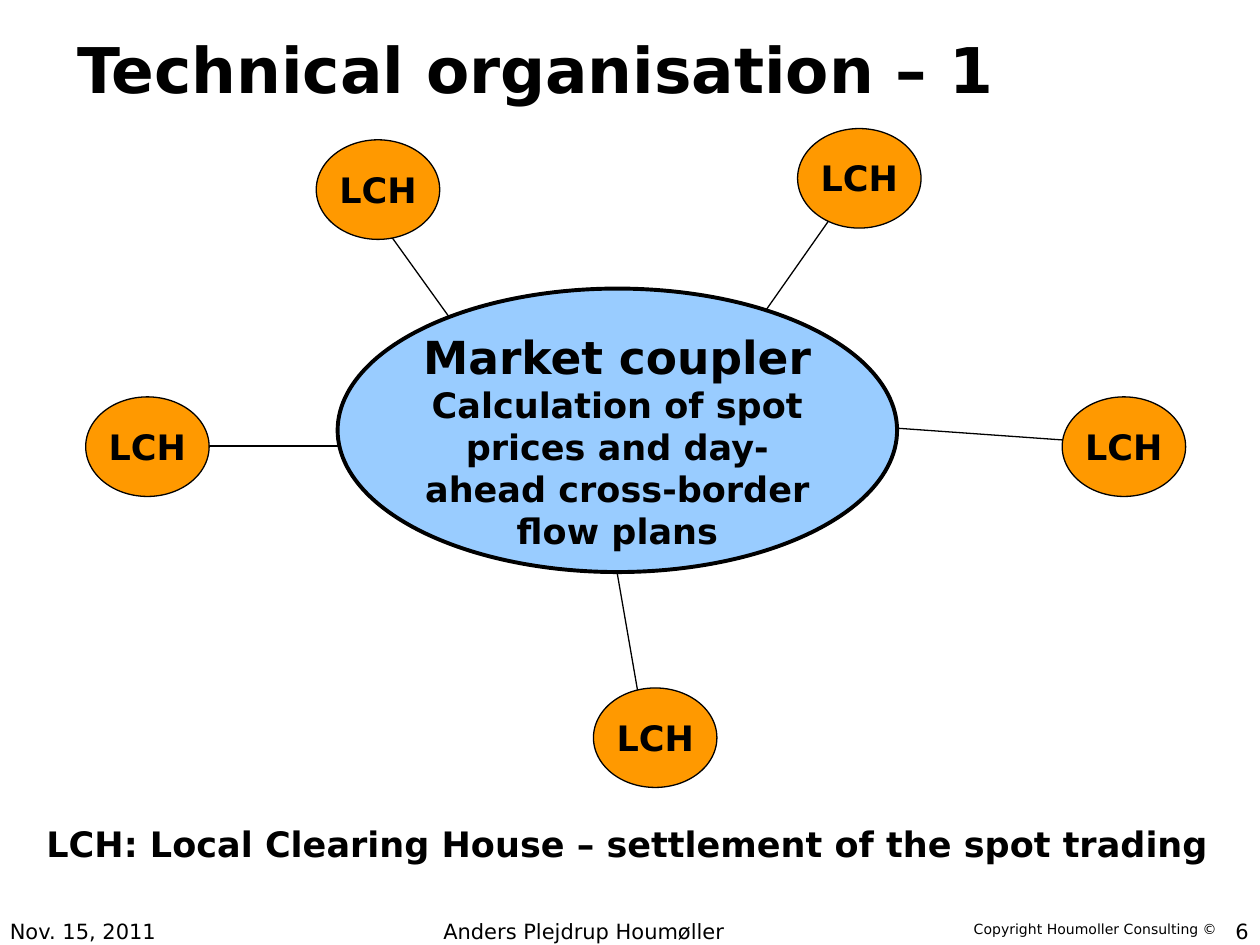
from dataclasses import dataclass

from lxml import etree
from pptx import Presentation
from pptx.dml.color import RGBColor
from pptx.enum import shapes as es, text as et
from pptx.oxml import ns
from pptx.slide import Slide
from pptx.util import Inches, Pt


@dataclass(frozen=True)
class Theme:
    face: str = "DejaVu Sans"
    ink: str = "000000"
    hub: str = "99CCFF"
    node: str = "FF9900"
    title: int = 36
    head: int = 26
    gap: int = 24
    body: int = 20
    foot: int = 12
    small: int = 8
    thin: float = 0.75
    thick: float = 2.25


@dataclass(frozen=True)
class Box:
    x: float
    y: float
    w: float
    h: float


@dataclass(frozen=True)
class Label:
    box: Box
    runs: tuple[tuple[str, int], ...]
    align: et.PP_ALIGN = et.PP_ALIGN.LEFT
    bold: bool = False
    wrap: bool = True
    middle: bool = False


@dataclass(frozen=True)
class House:
    x: float
    y: float
    start: tuple[float, float]
    end: tuple[float, float]


T = Theme()
MID, RIGHT = et.PP_ALIGN.CENTER, et.PP_ALIGN.RIGHT

HUB = Box(2.68, 2.29, 4.44, 2.25)
HOUSES = (
    House(4.71, 5.46, (4.85, 4.27), (5.1, 5.71)),
    House(8.43, 3.15, (8.69, 3.51), (6.86, 3.38)),
    House(6.33, 1.02, (6.67, 1.62), (6.01, 2.56)),
    House(2.51, 1.11, (3, 1.73), (3.74, 2.76)),
    House(0.68, 3.15, (1.39, 3.54), (3.16, 3.54)),
)
FRAME = (
    Label(Box(7.63, 7.26, 2.16, 0.23),
          (("Copyright Houmoller Consulting ©", T.small),), wrap=False),
    Label(Box(0, -0.08, 8.5, 1.25), (("Technical organisation – 1", T.title),),
          MID, bold=True, middle=True),
    Label(Box(-0.02, 7.24, 2.33, 0.52), (("Nov. 15, 2011", T.foot),)),
    Label(Box(3.42, 7.24, 3.17, 0.52), (("Anders Plejdrup Houmøller", T.foot),)),
    Label(Box(7.68, 7.24, 2.33, 0.52), (("6", T.foot),), RIGHT),
    Label(Box(0.07, 6.48, 9.82, 0.44),
          (("LCH: Local Clearing House – settlement of the spot trading", T.body),),
          MID, bold=True, wrap=False),
)
COUPLER = Label(
    Box(3.21, 2.56, 3.38, 1.99),
    (("Market coupler", T.head), (" ", T.gap),
     ("Calculation of spot prices and day-ahead cross-border flow plans", T.body)),
    MID, bold=True)


def place(box: Box) -> tuple[Inches, ...]:
    return tuple(Inches(v) for v in (box.x, box.y, box.w, box.h))


def write(slide: Slide, label: Label) -> None:
    frame = slide.shapes.add_textbox(*place(label.box)).text_frame
    frame.word_wrap = label.wrap
    if label.middle:
        frame.vertical_anchor = et.MSO_ANCHOR.MIDDLE
    para = frame.paragraphs[0]
    para.alignment = label.align
    para.font.name = T.face
    para.font.bold = label.bold
    para.font.color.rgb = RGBColor.from_string(T.ink)
    if len(label.runs) == 1:
        para.font.size = Pt(label.runs[0][1])
    for words, size in label.runs:
        run = para.add_run()
        run.text = words
        if len(label.runs) > 1:
            run.font.size = Pt(size)


def oval(slide: Slide, box: Box, fill: str, width: float) -> None:
    shape = slide.shapes.add_shape(es.MSO_SHAPE.OVAL, *place(box))
    shape.shadow.inherit = False
    shape.fill.solid()
    shape.fill.fore_color.rgb = RGBColor.from_string(fill)
    shape.line.color.rgb = RGBColor.from_string(T.ink)
    shape.line.width = Pt(width)


def spoke(slide: Slide, house: House) -> None:
    ends = (Inches(v) for v in house.start + house.end)
    line = slide.shapes.add_connector(es.MSO_CONNECTOR.STRAIGHT, *ends)
    line.line.color.rgb = RGBColor.from_string(T.ink)
    line.line.width = Pt(T.thin)
    etree.SubElement(line._element.spPr, ns.qn("a:effectLst"))


def node(slide: Slide, house: House) -> None:
    oval(slide, Box(house.x, house.y, 0.98, 0.79), T.node, T.thin)
    write(slide, Label(Box(house.x + 0.08, house.y + 0.175, 0.82, 0.44),
                       (("LCH", T.body),), MID, bold=True, wrap=False))


def main() -> None:
    deck = Presentation()
    deck.slide_width, deck.slide_height = Inches(10), Inches(7.5)
    slide = deck.slides.add_slide(deck.slide_layouts[6])
    for label in FRAME:
        write(slide, label)
    for house in HOUSES:
        spoke(slide, house)
    for house in HOUSES:
        node(slide, house)
    oval(slide, HUB, T.hub, T.thick)
    write(slide, COUPLER)
    deck.save("out.pptx")


if __name__ == "__main__":
    main()
